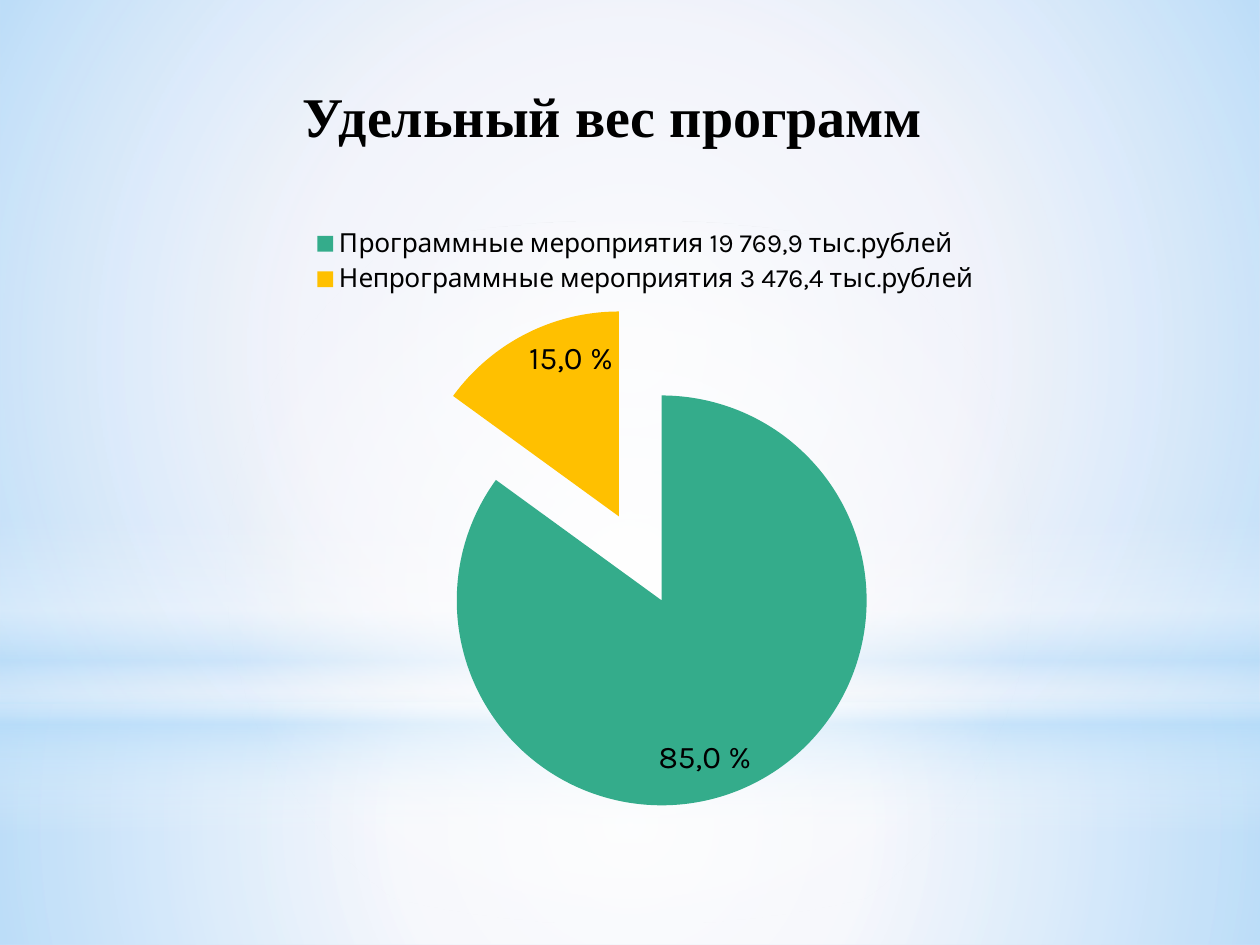
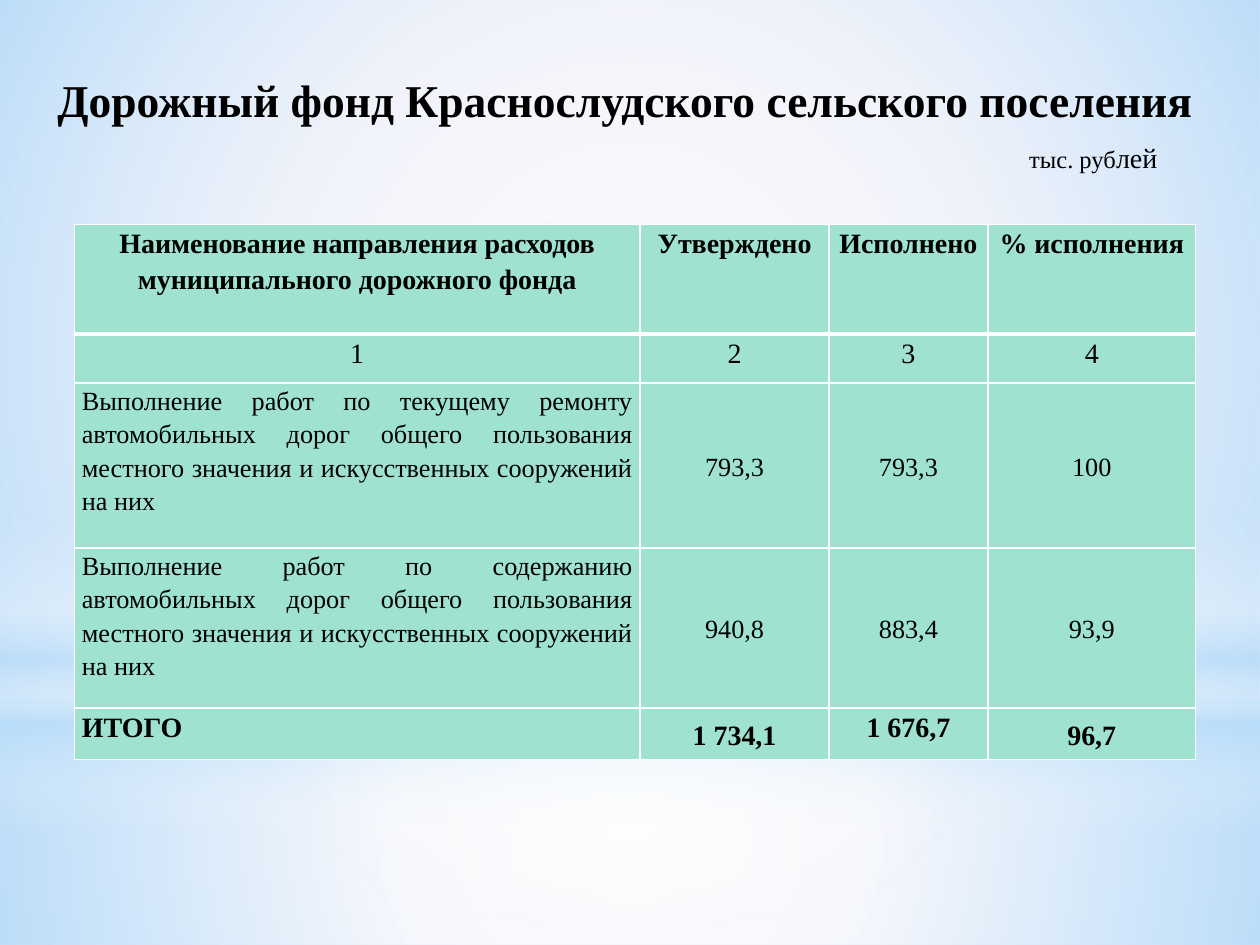
from dataclasses import dataclass

from pptx import Presentation, oxml
from pptx import util as u
from pptx.chart import data
from pptx.dml import color
from pptx.enum import chart as ch
from pptx.enum import shapes, text
from pptx.oxml import ns

PX = 9144
BOX = shapes.MSO_SHAPE.RECTANGLE
OVAL = shapes.MSO_SHAPE.OVAL
LEFT, MID, JUST = (text.PP_ALIGN.LEFT, text.PP_ALIGN.CENTER,
                   text.PP_ALIGN.JUSTIFY)


@dataclass(frozen=True)
class Theme:
    back: str = "DCE1F4"
    ink: str = "000000"
    white: str = "FFFFFF"
    sky: str = "B4DCFA"
    mint: str = "9EE2CF"
    green: str = "34AC8B"
    gold: str = "FFC000"
    serif: str = "Times New Roman"
    sans: str = "Karla"
    big: int = 32
    head: int = 26
    label: int = 18
    cell: int = 16
    body: int = 15
    note: int = 14


def rgb(code):
    return color.RGBColor.from_string(code)


def node(tag, inner="", attrs=""):
    space = ns.nsdecls(tag.split(":")[0])
    return oxml.parse_xml(f"<{tag} {space} {attrs}>{inner}</{tag}>")


def style(font, size, face, ink, bold=False):
    font.size, font.name, font.bold = u.Pt(size), face, bold
    font.color.rgb = rgb(ink)


def write(frame, runs, face, ink, size=16, bold=False, align=LEFT, gap=None):
    para = frame.paragraphs[0]
    para.alignment = align
    if gap:
        para.line_spacing = gap
    for part in [(runs, size)] if isinstance(runs, str) else runs:
        run = para.add_run()
        run.text = part[0]
        style(run.font, part[1], face, ink, bold)


class Deck:
    def __init__(self, look):
        self.look = look
        self.file = Presentation()
        self.file.slide_width, self.file.slide_height = 1000 * PX, 750 * PX
        self.slide = None

    def page(self):
        t = self.look
        self.slide = self.file.slides.add_slide(self.file.slide_layouts[6])
        fill = self.slide.background.fill
        fill.solid()
        fill.fore_color.rgb = rgb(t.back)
        self.glow(BOX, (0, 558, 1000, 192),
                  [(0, t.white, 91), (37, t.white, 76), (100, t.sky, 79)])
        self.glow(BOX, (0, 0, 1000, 558),
                  [(0, t.white, 89), (48, t.white, 62), (100, t.sky, 79)])
        self.glow(BOX, (0, 412, 1000, 250),
                  [(0, t.white, 0), (29, t.white, 30), (45, t.sky, 40),
                   (55, t.white, 26), (65, t.sky, 60), (100, t.white, 0)],
                  round=False)
        self.glow(OVAL, (0, 175, 1000, 558),
                  [(0, t.white, 100), (56, t.white, 0)])

    def glow(self, kind, area, stops, round=True):
        shape = self.slide.shapes.add_shape(kind, *(n * PX for n in area))
        shape.shadow.inherit = False
        shape.line.fill.background()
        marks = "".join(
            f'<a:gs pos="{at * 1000}"><a:srgbClr val="{tone}">'
            f'<a:alpha val="{alpha * 1000}"/></a:srgbClr></a:gs>'
            for at, tone, alpha in stops)
        if round:
            way = ('<a:path path="circle"><a:fillToRect l="50000" t="50000" '
                   'r="50000" b="50000"/></a:path>')
        else:
            way = '<a:lin ang="5400000" scaled="0"/>'
        grad = node("a:gradFill", f"<a:gsLst>{marks}</a:gsLst>{way}",
                    'rotWithShape="1"')
        shape._element.spPr.find(ns.qn("a:prstGeom")).addnext(grad)

    def text(self, area, runs, **form):
        box = self.slide.shapes.add_textbox(*(n * PX for n in area))
        box.text_frame.word_wrap = True
        write(box.text_frame, runs, self.look.serif, self.look.ink, **form)

    def title(self, area, words, size):
        self.text(area, words, size=size, bold=True, align=MID)

    def pie(self, area, plot, name, parts, burst):
        t = self.look
        info = data.CategoryChartData()
        info.categories = [part[0] for part in parts]
        info.add_series(name, [part[1] for part in parts])
        chart = self.slide.shapes.add_chart(
            ch.XL_CHART_TYPE.PIE, *(n * PX for n in area), info).chart
        chart.has_title = False
        style(chart.font, t.label, t.sans, t.ink)
        chart.has_legend = True
        chart.legend.position = ch.XL_LEGEND_POSITION.TOP
        chart.legend.include_in_layout = False
        style(chart.legend.font, t.body, t.sans, t.ink)
        chart.plots[0].vary_by_categories = True
        row = chart.plots[0].series[0]
        row._element.find(ns.qn("c:tx")).addnext(
            node("c:explosion", attrs=f'val="{burst}"'))
        for i, (_, _, label, tone) in enumerate(parts):
            point = row.points[i]
            point.format.fill.solid()
            point.format.fill.fore_color.rgb = rgb(tone)
            point.format.line.fill.background()
            write(point.data_label.text_frame, label, t.sans, t.ink,
                  size=t.label)
            point.data_label.position = ch.XL_LABEL_POSITION.INSIDE_END
        self.place(chart, plot)

    def place(self, chart, plot):
        zone = chart._chartSpace.find(".//" + ns.qn("c:plotArea"))
        for old in zone.findall(ns.qn("c:layout")):
            zone.remove(old)
        keys = [("layoutTarget", "inner"), ("xMode", "edge"),
                ("yMode", "edge"), *zip("xywh", plot)]
        inner = "".join(f'<c:{key} val="{val}"/>' for key, val in keys)
        zone.insert(0, node("c:layout",
                            f"<c:manualLayout>{inner}</c:manualLayout>"))

    def table(self, left, top, cols, rows, cells):
        t = self.look
        grid = self.slide.shapes.add_table(
            len(rows), len(cols), left * PX, top * PX,
            sum(cols) * PX, sum(rows) * PX).table
        for col, wide in zip(grid.columns, cols):
            col.width = wide * PX
        for row, high in zip(grid.rows, rows):
            row.height = high * PX
        last = len(rows) - 1
        for r, line in enumerate(cells):
            for c, words in enumerate(line):
                cell = grid.cell(r, c)
                cell.margin_left = cell.margin_right = 6 * PX
                cell.margin_top = cell.margin_bottom = 0
                inset = r > 1 and c > 0 and (r, c) != (last, 2)
                cell.vertical_anchor = (text.MSO_ANCHOR.MIDDLE if inset
                                        else text.MSO_ANCHOR.TOP)
                cell.fill.solid()
                cell.fill.fore_color.rgb = rgb(t.mint)
                self.edge(cell, L=1, R=1, T=3 if r == 1 else 1,
                          B=3 if r == 0 else 1)
                write(cell.text_frame, words, t.serif, t.ink,
                      size=t.body if 1 < r < last else t.cell,
                      bold=r in (0, last), gap=1.15,
                      align=JUST if r > 1 and c == 0 else MID)

    def edge(self, cell, **sides):
        tone = (f'<a:solidFill><a:srgbClr val="{self.look.white}"/>'
                '</a:solidFill>')
        for i, (side, wide) in enumerate(sides.items()):
            cell._tc.get_or_add_tcPr().insert(
                i, node(f"a:ln{side}", tone, f'w="{u.Pt(wide)}"'))


def share(deck):
    t = deck.look
    deck.page()
    deck.title((43, 60, 887, 92), "Удельный вес программ", t.big)
    deck.pie((91, 170, 843, 488), (0.13, 0.15, 0.73, 0.82), "Series 1", [
        ("Программные мероприятия 19 769,9 тыс.рублей", 85, "85,0 %", t.green),
        ("Непрограммные мероприятия 3 476,4 тыс.рублей", 15, "15,0 %", t.gold),
    ], burst=23)


def roads(deck):
    t = deck.look
    tail = ("автомобильных дорог общего пользования местного значения "
            "и искусственных сооружений на них")
    deck.page()
    deck.title((28, 52, 937, 55),
               "Дорожный фонд Краснослудского сельского поселения", t.head)
    deck.table(59, 178, (449, 150, 126, 165), (87, 39, 131, 127, 41), [
        ("Наименование направления расходов муниципального дорожного фонда",
         "Утверждено", "Исполнено", "% исполнения"),
        ("1", "2", "3", "4"),
        (f"Выполнение работ по текущему ремонту {tail}",
         "793,3", "793,3", "100"),
        (f"Выполнение работ по содержанию {tail}", "940,8", "883,4", "93,9"),
        ("ИТОГО", "1 734,1", "1 676,7", "96,7"),
    ])
    deck.text((807, 107, 193, 37), [("тыс. руб", t.note), ("лей", t.cell)])


def main():
    deck = Deck(Theme())
    share(deck)
    roads(deck)
    deck.file.save("out.pptx")


if __name__ == "__main__":
    main()
